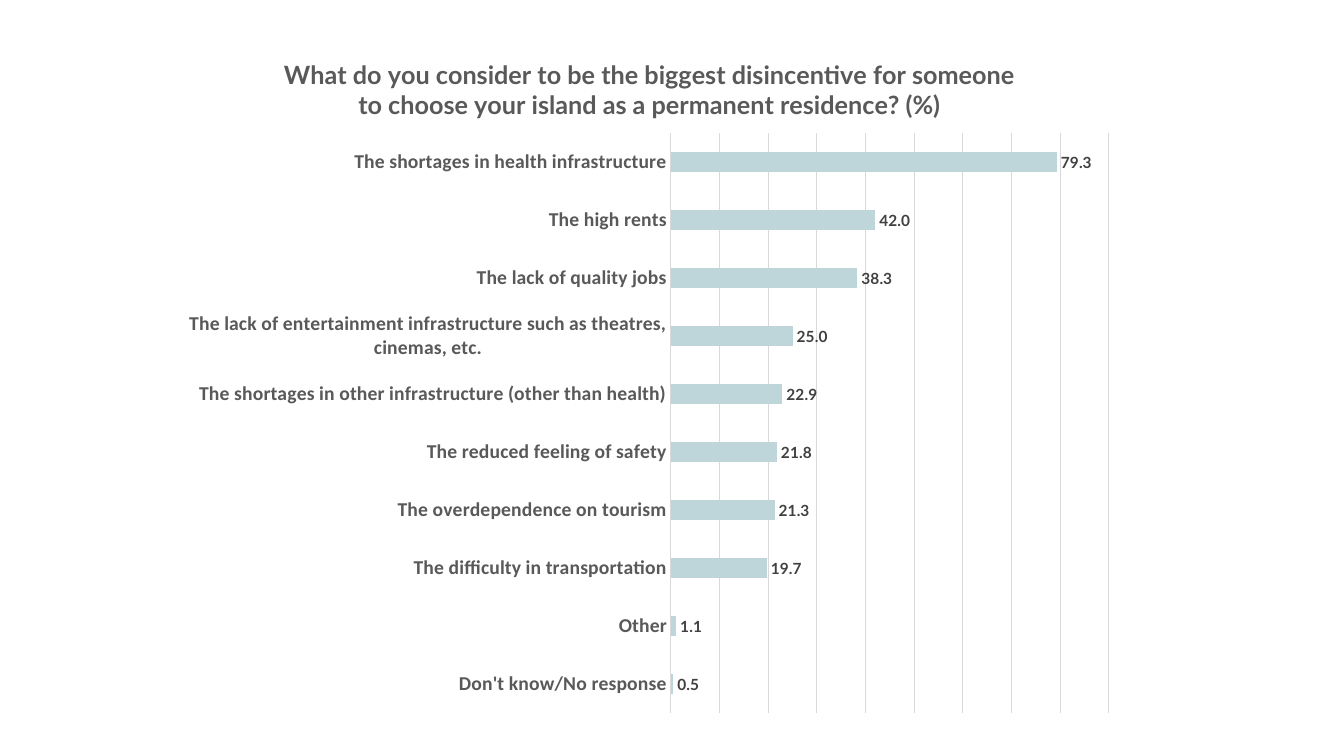
from dataclasses import dataclass

from lxml import etree
from pptx import Presentation
from pptx.chart.data import CategoryChartData
from pptx.dml.color import RGBColor
from pptx.enum.chart import XL_CHART_TYPE, XL_LABEL_POSITION, XL_TICK_MARK
from pptx.oxml.ns import qn
from pptx.util import Emu, Pt

BAR = XL_CHART_TYPE.BAR_CLUSTERED
OUTSIDE = XL_LABEL_POSITION.OUTSIDE_END
NO_TICK = XL_TICK_MARK.NONE
PX = 9071
FORMAT = "###0.0"

TITLE = (
    "What do you consider to be the biggest disincentive for someone",
    "to choose your island as a permanent residence? (%)",
)
ANSWERS = (
    ("Don't know/No response", 0.5),
    ("Other", 1.1),
    ("The difficulty in transportation", 19.7),
    ("The overdependence on tourism", 21.3),
    ("The reduced feeling of safety", 21.8),
    ("The shortages in other infrastructure (other than health)", 22.9),
    ("The lack of entertainment infrastructure such as theatres, cinemas, etc.", 25.0),
    ("The lack of quality jobs", 38.3),
    ("The high rents", 42.0),
    ("The shortages in health infrastructure", 79.3),
)


@dataclass(frozen=True)
class Theme:
    """Colours, fonts and type sizes of the slide."""

    bar: str = "BED6DA"
    grid: str = "D9D9D9"
    text: str = "595959"
    value: str = "404040"
    main: str = "Lato"
    axis: str = "Calibri"
    title_size: int = 18
    axis_size: int = 14
    value_size: int = 11


THEME = Theme()


def style(font, name, size, color):
    """Set a bold font with its name, size and colour."""
    font.name = name
    font.size = Pt(size)
    font.bold = True
    font.color.rgb = RGBColor.from_string(color)


def rule(line):
    """Give a line the thin grey look of the grid."""
    line.color.rgb = RGBColor.from_string(THEME.grid)
    line.width = Pt(0.75)


def place(part, box, inner, sized):
    """Fix a chart part at a px box within the px box of the chart."""
    left, top, width, height = box
    x, y, w, h = inner
    values = [("xMode", "edge"), ("yMode", "edge"),
              ("x", (x - left) / width), ("y", (y - top) / height)]
    if sized:
        values.insert(0, ("layoutTarget", "inner"))
        values += [("w", w / width), ("h", h / height)]
    layout = part.get_or_add_layout() if hasattr(part, "get_or_add_layout") else part.find(qn("c:layout"))
    if layout is None:
        layout = etree.Element(qn("c:layout"))
        part.insert(0, layout)
    for child in list(layout):
        layout.remove(child)
    manual = etree.SubElement(layout, qn("c:manualLayout"))
    for tag, value in values:
        text = value if isinstance(value, str) else f"{value:.4f}"
        etree.SubElement(manual, qn("c:" + tag)).set("val", text)


def add_title(chart, box):
    """Write the two-line question above the bars."""
    left, top, width, height = box
    frame = chart.chart_title.text_frame
    frame.text = TITLE[0]
    frame.add_paragraph().text = TITLE[1]
    for line in frame.paragraphs:
        style(line.font, THEME.main, THEME.title_size, THEME.text)
        for run in line.runs:
            style(run.font, THEME.main, THEME.title_size, THEME.text)
    chart.chart_title.include_in_layout = False
    place(chart.chart_title._element, box, (left + 111, top + 25, 730, 60), False)


def style_axes(chart):
    """Format the answer axis and hide the value axis."""
    answers = chart.category_axis
    answers.major_tick_mark = NO_TICK
    answers.minor_tick_mark = NO_TICK
    style(answers.tick_labels.font, THEME.axis, THEME.axis_size, THEME.text)
    rule(answers.format.line)
    scale = chart.value_axis
    scale.minimum_scale = 0
    scale.maximum_scale = 90
    scale.major_unit = 10
    scale.has_major_gridlines = True
    rule(scale.major_gridlines.format.line)
    scale.visible = False


def style_bars(chart):
    """Colour the bars and show their values."""
    plot = chart.plots[0]
    plot.gap_width = 182
    plot.vary_by_categories = False
    bars = plot.series[0]
    bars.format.fill.solid()
    bars.format.fill.fore_color.rgb = RGBColor.from_string(THEME.bar)
    labels = bars.data_labels
    labels.show_value = True
    labels.position = OUTSIDE
    labels.number_format = FORMAT
    labels.number_format_is_linked = False
    style(labels.font, THEME.main, THEME.value_size, THEME.value)


def add_survey(slide, box):
    """Place the survey chart in the given px box."""
    left, top, width, height = box
    data = CategoryChartData(number_format=FORMAT)
    data.categories = [name for name, value in ANSWERS]
    data.add_series("Series 1", [value for name, value in ANSWERS])
    area = [Emu(size * PX) for size in box]
    chart = slide.shapes.add_chart(BAR, *area, data).chart
    chart.font.name = THEME.main
    chart.font.size = Pt(10)
    chart.has_legend = False
    add_title(chart, box)
    style_axes(chart)
    style_bars(chart)
    field = chart._chartSpace.chart.plotArea
    place(field, box, (left + 501, top + 104, 438, 580), True)


def main():
    """Build and save the slide."""
    deck = Presentation()
    deck.slide_width = Emu(1344 * PX)
    deck.slide_height = Emu(756 * PX)
    slide = deck.slides.add_slide(deck.slide_layouts[6])
    add_survey(slide, (170, 29, 959, 699))
    deck.save("out.pptx")


if __name__ == "__main__":
    main()
